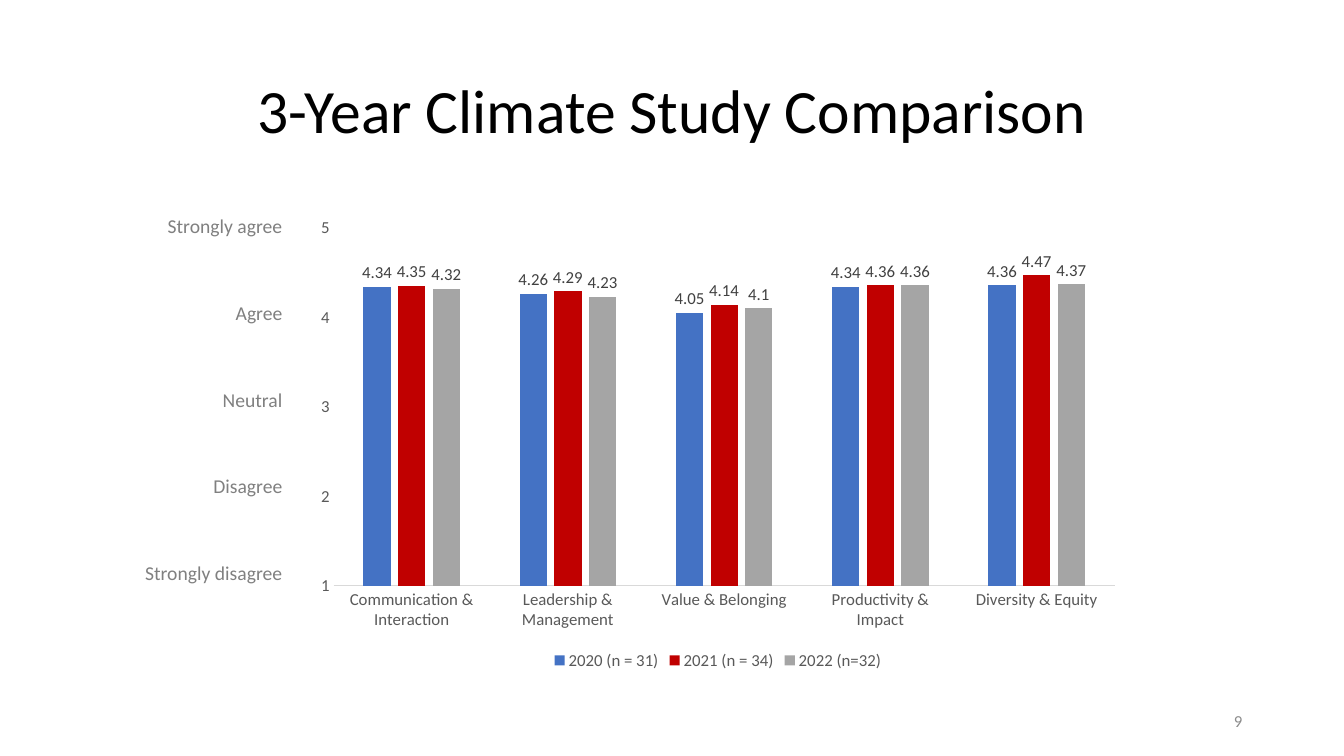
import dataclasses

import pptx
import pptx.chart.data
import pptx.dml.color
import pptx.enum.chart
import pptx.enum.text
import pptx.util

Inches = pptx.util.Inches
ALIGN = pptx.enum.text.PP_ALIGN
ANCHOR = pptx.enum.text.MSO_ANCHOR
CHART = pptx.enum.chart


@dataclasses.dataclass(frozen=True)
class Theme:
    font: str = "Calibri"
    title: str = "000000"
    scale: str = "808080"
    number: str = "8C8C8C"
    axis: str = "595959"
    label: str = "404040"
    rule: str = "D9D9D9"
    bars: tuple = ("4472C4", "C00000", "A5A5A5")
    title_size: int = 44
    scale_size: int = 14
    small_size: int = 12


THEME = Theme()
SCALE = ["Strongly agree", "Agree", "Neutral", "Disagree", "Strongly disagree"]
AREAS = ["Communication & Interaction", "Leadership & Management",
         "Value & Belonging", "Productivity & Impact", "Diversity & Equity"]
SCORES = {
    "2020 (n = 31)": (4.34, 4.26, 4.05, 4.34, 4.36),
    "2021 (n = 34)": (4.35, 4.29, 4.14, 4.36, 4.47),
    "2022 (n=32)": (4.32, 4.23, 4.1, 4.36, 4.37),
}


def set_all(obj, values):
    for name, value in values.items():
        setattr(obj, name, value)


def rgb(value):
    return pptx.dml.color.RGBColor.from_string(value)


def set_font(font, size, color):
    set_all(font, {"name": THEME.font, "size": pptx.util.Pt(size), "bold": False})
    font.color.rgb = rgb(color)


def add_text(slide, box, text, size, color, align, anchor=ANCHOR.MIDDLE, spacing=1.0):
    sp = slide.shapes.add_textbox(*map(Inches, box))
    tf = sp.text_frame
    set_all(tf, {"word_wrap": True, "vertical_anchor": anchor})
    p = tf.paragraphs[0]
    set_all(p, {"alignment": align, "line_spacing": spacing})
    r = p.add_run()
    r.text = text
    set_font(r.font, size, color)


def add_scale(slide, box):
    """Spread the agreement words evenly from the top to the foot of the box."""
    left, top, width, height = box
    row = 0.34
    step = (height - row) / (len(SCALE) - 1)
    for i, word in enumerate(SCALE):
        add_text(slide, (left, top + i * step, width, row), word,
                 THEME.scale_size, THEME.scale, ALIGN.RIGHT, ANCHOR.TOP)


def style_axes(chart):
    for axis in (chart.category_axis, chart.value_axis):
        set_all(axis, {"has_major_gridlines": False,
                       "major_tick_mark": CHART.XL_TICK_MARK.NONE,
                       "minor_tick_mark": CHART.XL_TICK_MARK.NONE})
        set_font(axis.tick_labels.font, THEME.small_size, THEME.axis)
    line = chart.category_axis.format.line
    line.width = pptx.util.Pt(0.75)
    line.color.rgb = rgb(THEME.rule)
    set_all(chart.value_axis, {"minimum_scale": 1, "maximum_scale": 5, "major_unit": 1})
    chart.value_axis.format.line.fill.background()


def style_bars(plot):
    set_all(plot, {"gap_width": 219, "overlap": -27, "vary_by_categories": False})
    for series, color in zip(plot.series, THEME.bars):
        series.format.fill.solid()
        series.format.fill.fore_color.rgb = rgb(color)
        series.invert_if_negative = False
        labels = series.data_labels
        set_all(labels, {"show_value": True,
                         "position": CHART.XL_LABEL_POSITION.OUTSIDE_END})
        set_font(labels.font, THEME.small_size, THEME.label)


def add_scores_chart(slide, box):
    data = pptx.chart.data.CategoryChartData()
    data.categories = AREAS
    for year, values in SCORES.items():
        data.add_series(year, values)
    chart = slide.shapes.add_chart(
        CHART.XL_CHART_TYPE.COLUMN_CLUSTERED, *map(Inches, box), data).chart
    set_font(chart.font, THEME.small_size, THEME.axis)
    set_all(chart, {"has_title": False, "has_legend": True})
    set_all(chart.legend, {"position": CHART.XL_LEGEND_POSITION.BOTTOM,
                           "include_in_layout": False})
    set_font(chart.legend.font, THEME.small_size, THEME.axis)
    style_axes(chart)
    style_bars(chart.plots[0])


def add_comparison_slide(prs):
    slide = prs.slides.add_slide(prs.slide_layouts[6])
    add_text(slide, (0.92, 0.4, 11.5, 1.45), "3-Year Climate Study Comparison",
             THEME.title_size, THEME.title, ALIGN.CENTER, spacing=0.9)
    add_text(slide, (9.42, 6.95, 3, 0.4), "9",
             THEME.small_size, THEME.number, ALIGN.RIGHT)
    add_scale(slide, (0.6, 2.07, 2.3, 3.79))
    add_scores_chart(slide, (3.02, 2.07, 8.2, 4.62))


def main():
    prs = pptx.Presentation()
    set_all(prs, {"slide_width": Inches(13.33), "slide_height": Inches(7.5)})
    add_comparison_slide(prs)
    prs.save("out.pptx")


if __name__ == "__main__":
    main()
